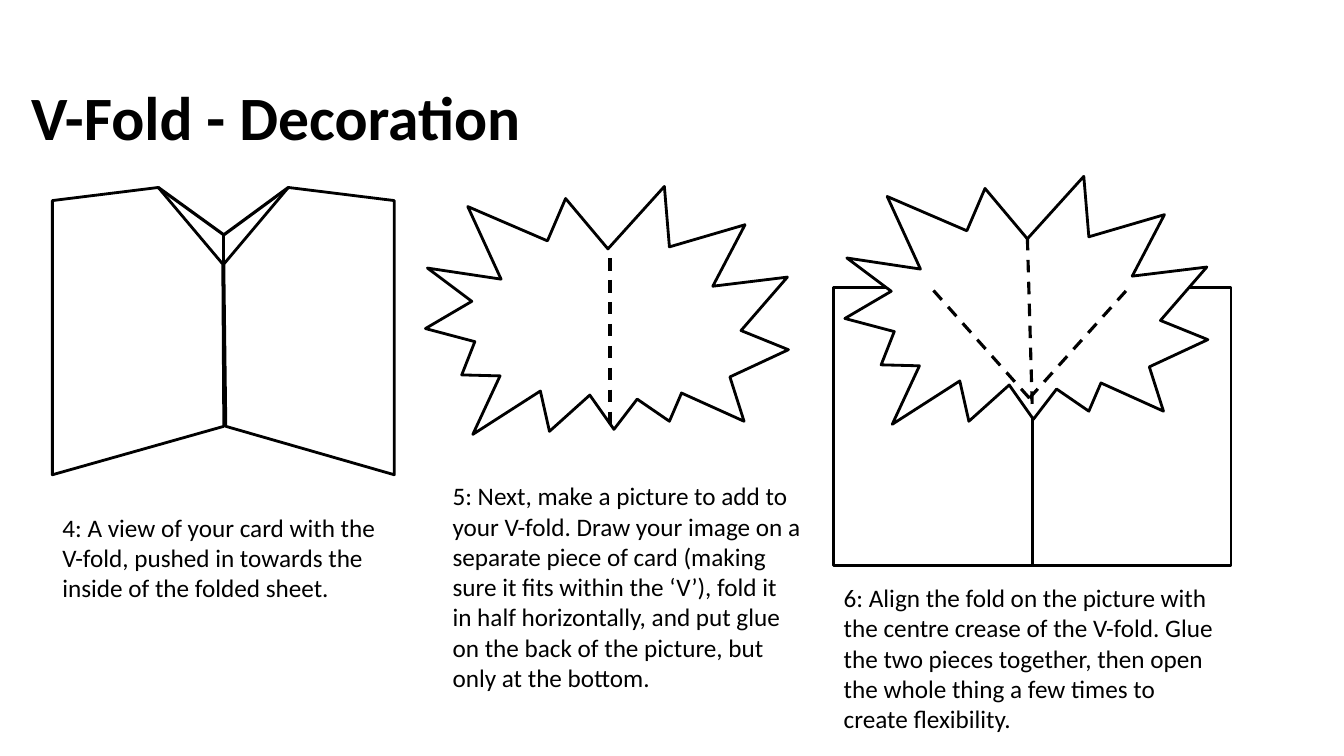
from dataclasses import dataclass

from lxml import etree
from pptx import Presentation
from pptx.dml.color import RGBColor
from pptx.enum.dml import MSO_LINE
from pptx.enum.shapes import MSO_CONNECTOR, MSO_SHAPE
from pptx.enum.text import MSO_ANCHOR, MSO_AUTO_SIZE
from pptx.oxml.ns import qn
from pptx.util import Inches, Pt

STRAIGHT = MSO_CONNECTOR.STRAIGHT
RECTANGLE = MSO_SHAPE.RECTANGLE
DASH = MSO_LINE.DASH
TOP, MIDDLE = MSO_ANCHOR.TOP, MSO_ANCHOR.MIDDLE
FIT_TEXT = MSO_AUTO_SIZE.SHAPE_TO_FIT_TEXT
NO_FIT = MSO_AUTO_SIZE.NONE


@dataclass(frozen=True)
class Theme:
    """Colours, font, type sizes and line widths of the slide."""
    ink: RGBColor = RGBColor(0, 0, 0)
    paper: RGBColor = RGBColor(255, 255, 255)
    font: str = "Calibri"
    title: Pt = Pt(44)
    body: Pt = Pt(18)
    outline: Pt = Pt(2)
    fold: Pt = Pt(2.25)


THEME = Theme()

STEPS = [
    ((0.52, 5.03, 3.38, 1.01),
     "4: A view of your card with the V-fold, pushed in towards the inside "
     "of the folded sheet."),
    ((4.39, 4.72, 3.65, 2.22),
     "5: Next, make a picture to add to your V-fold. Draw your image on a "
     "separate piece of card (making sure it fits within the ‘V’), fold it in "
     "half horizontally, and put glue on the back of the picture, but only at "
     "the bottom."),
    ((8.27, 5.73, 3.94, 1.62),
     "6: Align the fold on the picture with the centre crease of the V-fold. "
     "Glue the two pieces together, then open the whole thing a few times to "
     "create flexibility."),
]

LEFT_PANEL = [(0.52, 1.99), (1.57, 1.86), (2.21, 2.62), (2.22, 4.23), (0.52, 4.71)]
RIGHT_PANEL = [(3.91, 1.99), (2.86, 1.86), (2.22, 2.62), (2.24, 4.23), (3.91, 4.71)]

BURST = [
    (5.43, 2.39), (4.64, 2.05), (4.97, 2.77), (4.24, 2.66), (4.68, 2.99),
    (4.22, 3.26), (4.71, 3.39), (4.58, 3.72), (4.96, 3.73), (4.69, 4.31),
    (5.36, 3.88), (5.45, 4.28), (5.85, 3.92), (6.09, 4.26), (6.32, 3.96),
    (6.64, 4.18), (6.76, 3.9), (7.38, 4.18), (7.24, 3.74), (7.82, 3.47),
    (7.35, 3.28), (7.81, 2.75), (7.07, 2.84), (7.39, 2.23), (6.64, 2.45),
    (6.59, 1.85), (6.03, 2.47), (5.61, 1.97),
]


def add_text(s, box, text, size, bold=False, anchor=TOP, fit=FIT_TEXT):
    """Add a wrapped text box with one run."""
    tf = s.shapes.add_textbox(*map(Inches, box)).text_frame
    tf.word_wrap = True
    tf.auto_size = fit
    tf.vertical_anchor = anchor
    r = tf.paragraphs[0].add_run()
    r.text = text
    r.font.name = THEME.font
    r.font.size = size
    r.font.bold = bold
    r.font.color.rgb = THEME.ink


def style_paper(sp):
    """Give a shape the white fill and black outline of paper."""
    sp.shadow.inherit = False
    sp.fill.solid()
    sp.fill.fore_color.rgb = THEME.paper
    sp.line.color.rgb = THEME.ink
    sp.line.width = THEME.outline


def add_outline(s, points, dx=0, dy=0):
    """Add a closed paper outline, moved by dx and dy inches."""
    start, *rest = [(Inches(x + dx), Inches(y + dy)) for x, y in points]
    builder = s.shapes.build_freeform(*start)
    builder.add_line_segments(rest, close=True)
    style_paper(builder.convert_to_shape())


def add_page(s, box):
    """Add a rectangular page of the card."""
    style_paper(s.shapes.add_shape(RECTANGLE, *map(Inches, box)))


def add_fold(s, start, end, dashed=False):
    """Add a fold line between two points."""
    line = s.shapes.add_connector(STRAIGHT, *map(Inches, start + end))
    line.line.color.rgb = THEME.ink
    line.line.width = THEME.fold
    if dashed:
        line.line.dash_style = DASH
    etree.SubElement(line._element.spPr, qn("a:effectLst"))


def draw_pushed_in_card(s):
    """Draw step 4: the card with its V-fold pushed in."""
    crease = (2.22, 2.33)
    for panel in (LEFT_PANEL, RIGHT_PANEL):
        add_outline(s, panel)
        add_fold(s, crease, panel[1])
    add_fold(s, (2.22, 2.62), crease)


def draw_picture(s):
    """Draw step 5: the picture with its centre fold."""
    add_outline(s, BURST)
    add_fold(s, (6.05, 2.56), (6.05, 4.27), dashed=True)


def draw_assembled_card(s):
    """Draw step 6: the picture glued on the open card."""
    page_w = 1.97
    for i in (1, 0):
        add_page(s, (8.27 + i * page_w, 2.85, page_w, 2.76))
    add_outline(s, BURST, dx=4.16, dy=-0.1)
    for x in (11.2, 9.23):
        add_fold(s, (10.21, 3.95), (x, 2.85), dashed=True)
    add_fold(s, (10.19, 2.36), (10.24, 4.1), dashed=True)


def main():
    """Build the slide and save it."""
    prs = Presentation()
    prs.slide_width, prs.slide_height = Inches(13.33), Inches(7.5)
    s = prs.slides.add_slide(prs.slide_layouts[6])
    add_text(s, (0.21, 0.67, 12, 0.95), "V-Fold - Decoration", THEME.title,
             bold=True, anchor=MIDDLE, fit=NO_FIT)
    draw_pushed_in_card(s)
    draw_assembled_card(s)
    draw_picture(s)
    for box, text in STEPS:
        add_text(s, box, text, THEME.body)
    prs.save("out.pptx")


if __name__ == "__main__":
    main()
